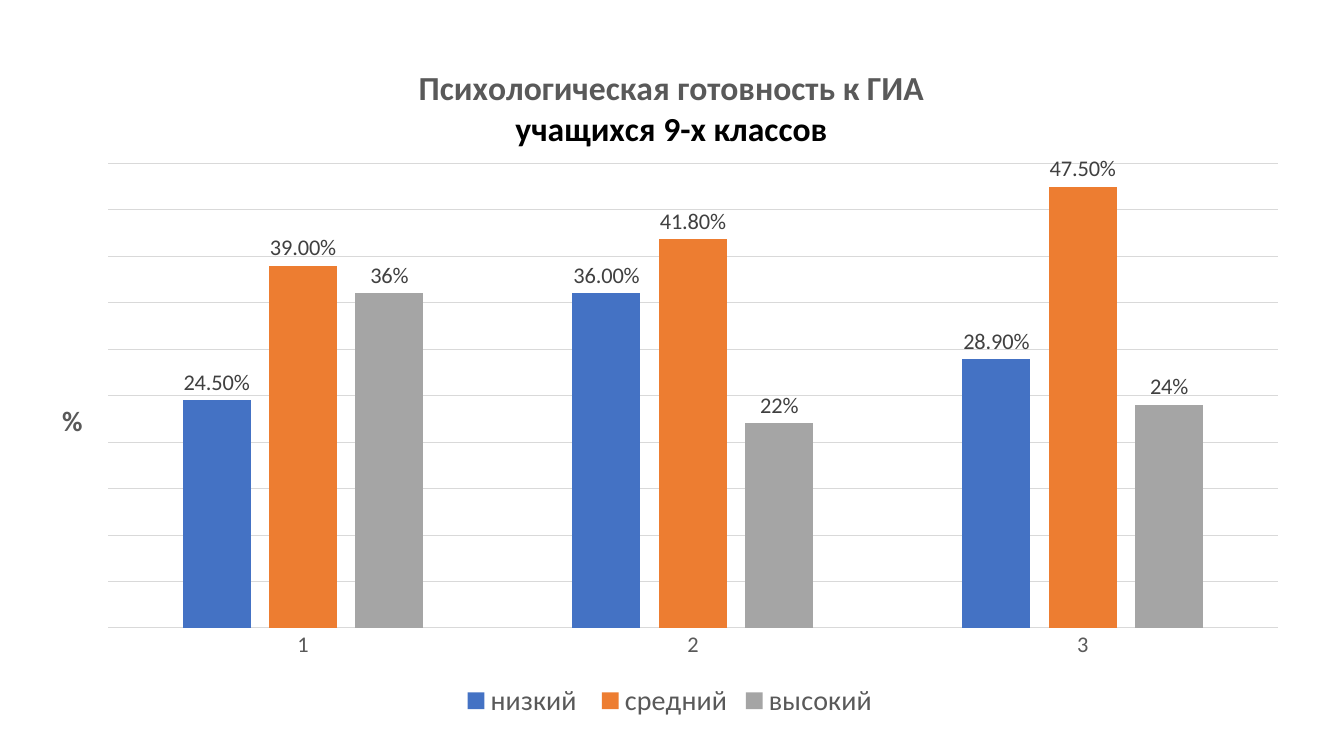
"""Builds a slide with a column chart of exam readiness among ninth-grade pupils."""
from pptx import Presentation
from pptx.chart.data import CategoryChartData
from pptx.dml.color import RGBColor
from pptx.enum.chart import XL_CHART_TYPE, XL_LABEL_POSITION, XL_LEGEND_POSITION, XL_TICK_MARK
from pptx.oxml import parse_xml
from pptx.oxml.ns import nsdecls, qn
from pptx.util import Inches, Pt

COLORS = {"text": "595959", "black": "000000", "label": "404040", "grid": "D9D9D9",
          "low": "4472C4", "middle": "ED7D31", "high": "A5A5A5"}
TITLE = [("Психологическая готовность к ГИА", "text"),
         ("учащихся 9-х классов", "black")]
AXIS_TITLE = [("%", "text")]
CATEGORIES = ["1", "2", "3"]
SERIES = [("низкий ", "low", (0.245, 0.36, 0.289), "0.00%"),
          ("средний", "middle", (0.39, 0.418, 0.475), "0.00%"),
          ("высокий", "high", (0.36, 0.22, 0.24), "0%")]
CHART_BOX = (0.34, 0.4, 12.61, 6.78)
PLOT_SHARES = {"x": 0.058, "y": 0.18, "w": 0.92, "h": 0.68}
TITLE_SHARES = {"x": 0.3, "y": 0.035}
AXIS_TITLE_SHARES = {"x": 0.018, "y": 0.52}


def rgb(name):
    return RGBColor.from_string(COLORS[name])


def style_font(font, size, color, bold=False):
    font.name = "Calibri"
    font.size = Pt(size)
    font.bold = bold
    font.color.rgb = rgb(color)


def style_line(line):
    line.color.rgb = rgb("grid")
    line.width = Pt(0.75)


def make_layout(shares, inner=False):
    target = '<c:layoutTarget val="inner"/>' if inner else ""
    modes = "".join(f'<c:{key}Mode val="edge"/>' for key in "xy")
    values = "".join(f'<c:{key} val="{share}"/>' for key, share in shares.items())
    return parse_xml(f'<c:layout {nsdecls("c")}><c:manualLayout>{target}{modes}{values}'
                     '</c:manualLayout></c:layout>')


def place(element, layout, index):
    for old in element.findall(qn("c:layout")):
        element.remove(old)
    element.insert(index, layout)


def write_title(title, lines, size, shares):
    frame = title.text_frame
    for number, (text, color) in enumerate(lines):
        para = frame.add_paragraph() if number else frame.paragraphs[0]
        span = para.add_run()
        span.text = text
        style_font(span.font, size, color, True)
    element = title._element
    element.xpath(".//a:bodyPr")[0].set("rot", "0")
    place(element, make_layout(shares), 1)


def add_readiness_chart(page):
    data = CategoryChartData()
    data.categories = CATEGORIES
    for name, _, values, number_format in SERIES:
        data.add_series(name, values, number_format)
    chart = page.shapes.add_chart(XL_CHART_TYPE.COLUMN_CLUSTERED,
                                  *map(Inches, CHART_BOX), data).chart
    style_font(chart.font, 10, "black")

    plot = chart.plots[0]
    plot.gap_width = 219
    plot.overlap = -27
    plot.vary_by_categories = False
    for series, (_, color, _, number_format) in zip(plot.series, SERIES):
        series.format.fill.solid()
        series.format.fill.fore_color.rgb = rgb(color)
        labels = series.data_labels
        labels.show_value = True
        labels.position = XL_LABEL_POSITION.OUTSIDE_END
        labels.number_format = number_format
        labels.number_format_is_linked = False
        style_font(labels.font, 16, "label")

    categories = chart.category_axis
    categories.major_tick_mark = XL_TICK_MARK.NONE
    style_font(categories.tick_labels.font, 16, "text")
    style_line(categories.format.line)

    scale = chart.value_axis
    scale.minimum_scale = 0
    scale.maximum_scale = 0.5
    scale.major_unit = 0.05
    scale.tick_labels.number_format = "0.00%"
    scale.tick_labels.number_format_is_linked = False
    style_line(scale.major_gridlines.format.line)
    write_title(scale.axis_title, AXIS_TITLE, 20, AXIS_TITLE_SHARES)
    scale.visible = False

    chart.has_title = True
    write_title(chart.chart_title, TITLE, 24, TITLE_SHARES)
    chart.has_legend = True
    chart.legend.position = XL_LEGEND_POSITION.BOTTOM
    chart.legend.include_in_layout = False
    style_font(chart.legend.font, 20, "text")
    place(chart._chartSpace.chart.plotArea, make_layout(PLOT_SHARES, inner=True), 0)


def main():
    deck = Presentation()
    deck.slide_width = Inches(13.33)
    deck.slide_height = Inches(7.5)
    page = deck.slides.add_slide(deck.slide_layouts[6])
    add_readiness_chart(page)
    deck.save("out.pptx")


if __name__ == "__main__":
    main()
